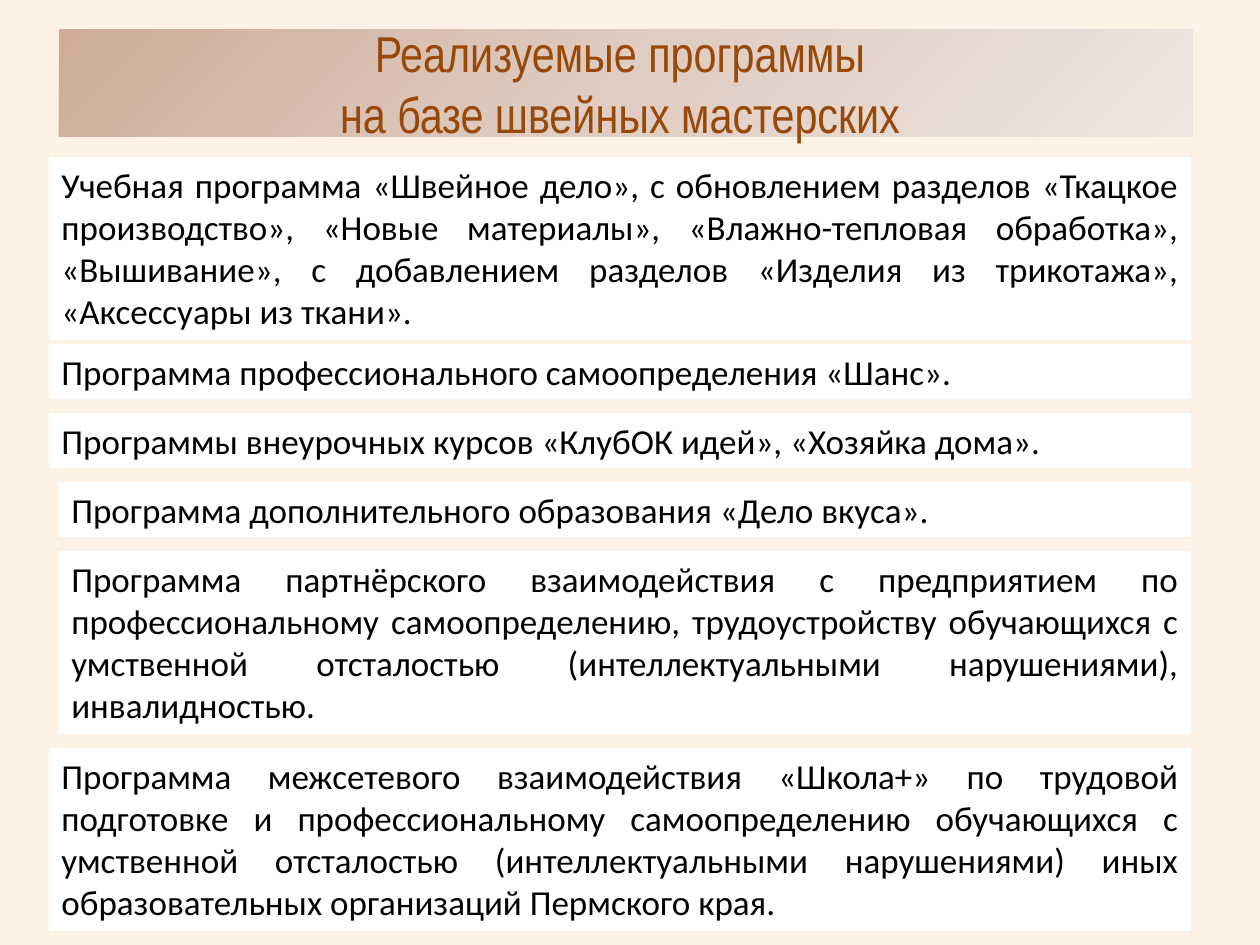
from copy import deepcopy

from pptx import Presentation
from pptx.dml.color import RGBColor
from pptx.enum.shapes import MSO_SHAPE as Shape
from pptx.enum.text import MSO_ANCHOR as Anchor, MSO_AUTO_SIZE as AutoSize, PP_ALIGN as Align
from pptx.util import Pt

EMU_PER_PX = 914400 / 126
BACKGROUND = RGBColor(0xFE, 0xF2, 0xE7)
WHITE = RGBColor(0xFF, 0xFF, 0xFF)
BLACK = RGBColor(0x00, 0x00, 0x00)
BROWN = RGBColor(0x98, 0x48, 0x07)
TITLE_GRADIENT = [
    RGBColor(0xCE, 0xAC, 0x99),
    RGBColor(0xDF, 0xCC, 0xC2),
    RGBColor(0xEF, 0xE6, 0xE1),
]

WIDE_LEFT, NARROW_LEFT, RIGHT = 49, 59, 1191
FIRST_TOP = 157
TITLE_LINES = ["Реализуемые программы ", "на базе швейных мастерских "]
PROGRAMS = [
    (WIDE_LEFT, 183, 4, Align.JUSTIFY,
     "Учебная программа «Швейное дело», с обновлением разделов «Ткацкое производство», "
     "«Новые материалы», «Влажно-тепловая обработка», «Вышивание», с добавлением разделов "
     "«Изделия из трикотажа», «Аксессуары из ткани»."),
    (WIDE_LEFT, 55, 14, Align.LEFT, "Программа профессионального самоопределения «Шанс»."),
    (WIDE_LEFT, 55, 14, Align.LEFT, "Программы внеурочных курсов «КлубОК идей», «Хозяйка дома»."),
    (NARROW_LEFT, 55, 14, Align.JUSTIFY, "Программа дополнительного образования «Дело вкуса»."),
    (NARROW_LEFT, 183, 14, Align.JUSTIFY,
     "Программа партнёрского взаимодействия с предприятием по профессиональному "
     "самоопределению, трудоустройству обучающихся с умственной отсталостью "
     "(интеллектуальными нарушениями), инвалидностью."),
    (WIDE_LEFT, 183, 0, Align.JUSTIFY,
     "Программа межсетевого взаимодействия «Школа+» по трудовой подготовке и "
     "профессиональному самоопределению обучающихся с умственной отсталостью "
     "(интеллектуальными нарушениями) иных образовательных организаций Пермского края."),
]


def px(length):
    """Turn pixels into EMU."""
    return round(length * EMU_PER_PX)


def add_box(slide, left, top, width, height, anchor):
    """Add a plain rectangle without line or shadow."""
    shape = slide.shapes.add_shape(Shape.RECTANGLE, px(left), px(top), px(width), px(height))
    shape.shadow.inherit = False
    shape.line.fill.background()
    shape.text_frame.word_wrap = True
    shape.text_frame.vertical_anchor = anchor
    return shape


def add_run(paragraph, text, font_name, size, color):
    """Add one formatted run to a paragraph."""
    run = paragraph.add_run()
    run.text = text
    run.font.name = font_name
    run.font.size = Pt(size)
    run.font.color.rgb = color


def fill_gradient(shape, colors, angle):
    """Fill a shape with three evenly spaced gradient colours."""
    shape.fill.gradient()
    shape.fill.gradient_angle = angle
    first_stop = shape.element.spPr.xpath(".//a:gs")[0]
    first_stop.addnext(deepcopy(first_stop))
    for index, (stop, color) in enumerate(zip(shape.fill.gradient_stops, colors)):
        stop.position = index / (len(colors) - 1)
        stop.color.rgb = color


def add_title(slide):
    """Add the gradient title bar."""
    shape = add_box(slide, 59, 29, 1134, 108, Anchor.MIDDLE)
    fill_gradient(shape, TITLE_GRADIENT, 315)
    paragraph = shape.text_frame.paragraphs[0]
    paragraph.alignment = Align.CENTER
    for index, line in enumerate(TITLE_LINES):
        if index:
            paragraph.add_line_break()
        add_run(paragraph, line, "Arial Narrow", 28.8, BROWN)


def add_program(slide, left, top, height, alignment, text):
    """Add one white program box."""
    shape = add_box(slide, left, top, RIGHT - left, height, Anchor.TOP)
    shape.fill.solid()
    shape.fill.fore_color.rgb = WHITE
    shape.text_frame.auto_size = AutoSize.SHAPE_TO_FIT_TEXT
    paragraph = shape.text_frame.paragraphs[0]
    paragraph.alignment = alignment
    add_run(paragraph, text, "Calibri", 20, BLACK)


def main():
    """Build and save the slide."""
    presentation = Presentation()
    presentation.slide_width, presentation.slide_height = px(1260), px(945)
    slide = presentation.slides.add_slide(presentation.slide_layouts[6])
    slide.background.fill.solid()
    slide.background.fill.fore_color.rgb = BACKGROUND
    add_title(slide)
    top = FIRST_TOP
    for left, height, gap, alignment, text in PROGRAMS:
        add_program(slide, left, top, height, alignment, text)
        top += height + gap
    presentation.save("out.pptx")


if __name__ == "__main__":
    main()
